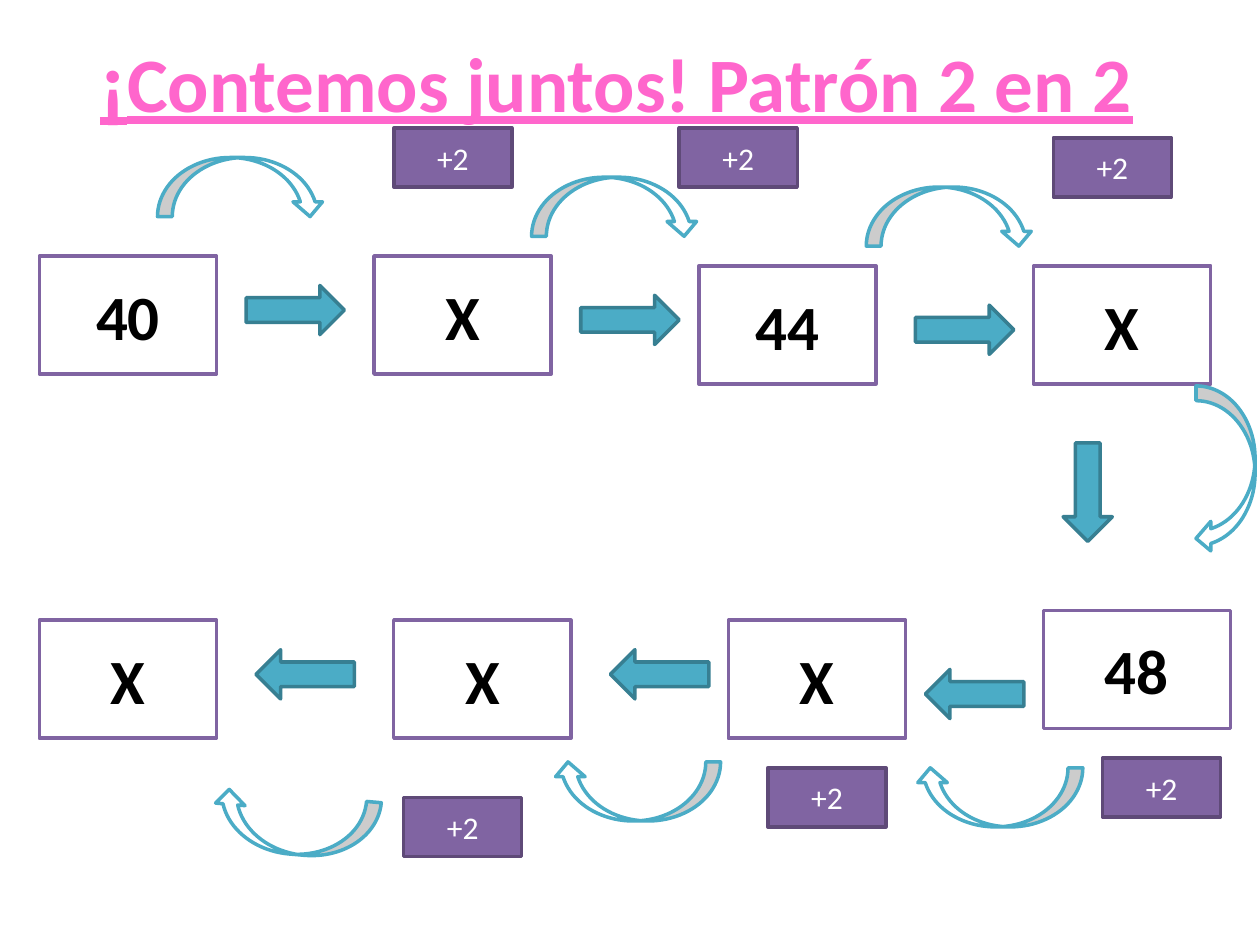
"""Build a counting-by-twos slide with a winding path of number cards."""
import dataclasses

import pptx
import pptx.dml.color
import pptx.enum.shapes
import pptx.enum.text
import pptx.util

PX = 914400 / 128
SHAPE = pptx.enum.shapes.MSO_SHAPE


@dataclasses.dataclass(frozen=True)
class Theme:
    """Colours, font and type sizes."""
    font: str = "Calibri"
    pink: str = "FF66CC"
    purple: str = "8064A2"
    dark_purple: str = "5F4A78"
    teal: str = "4BACC6"
    dark_teal: str = "377F92"
    white: str = "FFFFFF"
    black: str = "000000"
    title_mark_size: int = 48
    title_size: int = 44
    number_size: int = 36
    step_size: int = 18
    line_width: int = 2


THEME = Theme()

NUMBER_CARDS = [
    ("40", 40, 260, 180), ("X", 380, 260, 180),
    ("44", 710, 270, 180), ("X", 1050, 270, 180),
    ("48", 1060, 620, 190), ("X", 740, 630, 180),
    ("X", 400, 630, 180), ("X", 40, 630, 180),
]
PATH_ARROWS = [
    (250, 290, 0), (590, 300, 0), (930, 310, 0), (1055, 475, 90),
    (940, 680, 180), (620, 660, 180), (260, 660, 180),
]
JUMPS = [
    (160, 160, 0), (540, 180, 0), (880, 190, 0), (1160, 447, 90),
    (930, 780, 180), (562, 774, 180), (215, 808, 185),
]
STEP_TAGS = [
    (400, 130), (690, 130), (1070, 140),
    (1120, 770), (780, 780), (410, 810),
]


def px(length):
    """Turn pixels into EMU."""
    return pptx.util.Emu(round(length * PX))


def rgb(colour):
    """Turn a hex string into a colour."""
    return pptx.dml.color.RGBColor.from_string(colour)


def style_run(run, size, colour, bold=False, underline=None):
    """Format one run of text."""
    run.font.name = THEME.font
    run.font.size = pptx.util.Pt(size)
    run.font.color.rgb = rgb(colour)
    run.font.bold = bold
    run.font.underline = underline


def add_figure(slide, kind, box, fill, line, rotation=0):
    """Add a filled and outlined preset shape."""
    figure = slide.shapes.add_shape(kind, *map(px, box))
    figure.shadow.inherit = False
    figure.fill.solid()
    figure.fill.fore_color.rgb = rgb(fill)
    figure.line.color.rgb = rgb(line)
    figure.line.width = pptx.util.Pt(THEME.line_width)
    figure.rotation = rotation
    return figure


def add_label(figure, text, size, colour, bold=False):
    """Write centred text inside a figure."""
    frame = figure.text_frame
    frame.text = text
    frame.vertical_anchor = pptx.enum.text.MSO_ANCHOR.MIDDLE
    paragraph = frame.paragraphs[0]
    paragraph.alignment = pptx.enum.text.PP_ALIGN.CENTER
    style_run(paragraph.runs[0], size, colour, bold)


def add_title(slide):
    """Fill the title placeholder with its larger opening mark."""
    title = slide.shapes.title
    title.left, title.top, title.width, title.height = map(px, (50, 0, 1152, 160))
    title.text_frame.vertical_anchor = pptx.enum.text.MSO_ANCHOR.MIDDLE
    heading = title.text_frame.paragraphs[0]
    heading.alignment = pptx.enum.text.PP_ALIGN.CENTER
    for text, size in (("¡", THEME.title_mark_size),
                       ("Contemos juntos! Patrón 2 en 2", THEME.title_size)):
        run = heading.add_run()
        run.text = text
        style_run(run, size, THEME.pink, bold=True, underline=True)


def add_number_card(slide, number, left, top, width):
    """Add a white card holding a number or an unknown."""
    card = add_figure(slide, SHAPE.RECTANGLE, (left, top, width, 120),
                      THEME.white, THEME.purple)
    add_label(card, number, THEME.number_size, THEME.black, bold=True)


def add_path_arrow(slide, left, top, rotation):
    """Add a block arrow leading to the next card."""
    add_figure(slide, SHAPE.RIGHT_ARROW, (left, top, 100, 50),
               THEME.teal, THEME.dark_teal, rotation)


def add_jump(slide, left, top, rotation):
    """Add a curved arrow jumping to the next card."""
    add_figure(slide, SHAPE.CURVED_DOWN_ARROW, (left, top, 170, 60),
               THEME.white, THEME.teal, rotation)


def add_step_tag(slide, left, top):
    """Add a purple tag naming the step."""
    tag = add_figure(slide, SHAPE.RECTANGLE, (left, top, 120, 60),
                     THEME.purple, THEME.dark_purple)
    add_label(tag, "+2", THEME.step_size, THEME.white)


def main():
    """Build and save the slide."""
    deck = pptx.Presentation()
    deck.slide_width, deck.slide_height = px(1280), px(960)
    slide = deck.slides.add_slide(deck.slide_layouts.get_by_name("Title Only"))
    add_title(slide)
    for add_part, places in ((add_number_card, NUMBER_CARDS),
                             (add_path_arrow, PATH_ARROWS),
                             (add_jump, JUMPS),
                             (add_step_tag, STEP_TAGS)):
        for place in places:
            add_part(slide, *place)
    deck.save("out.pptx")


if __name__ == "__main__":
    main()
